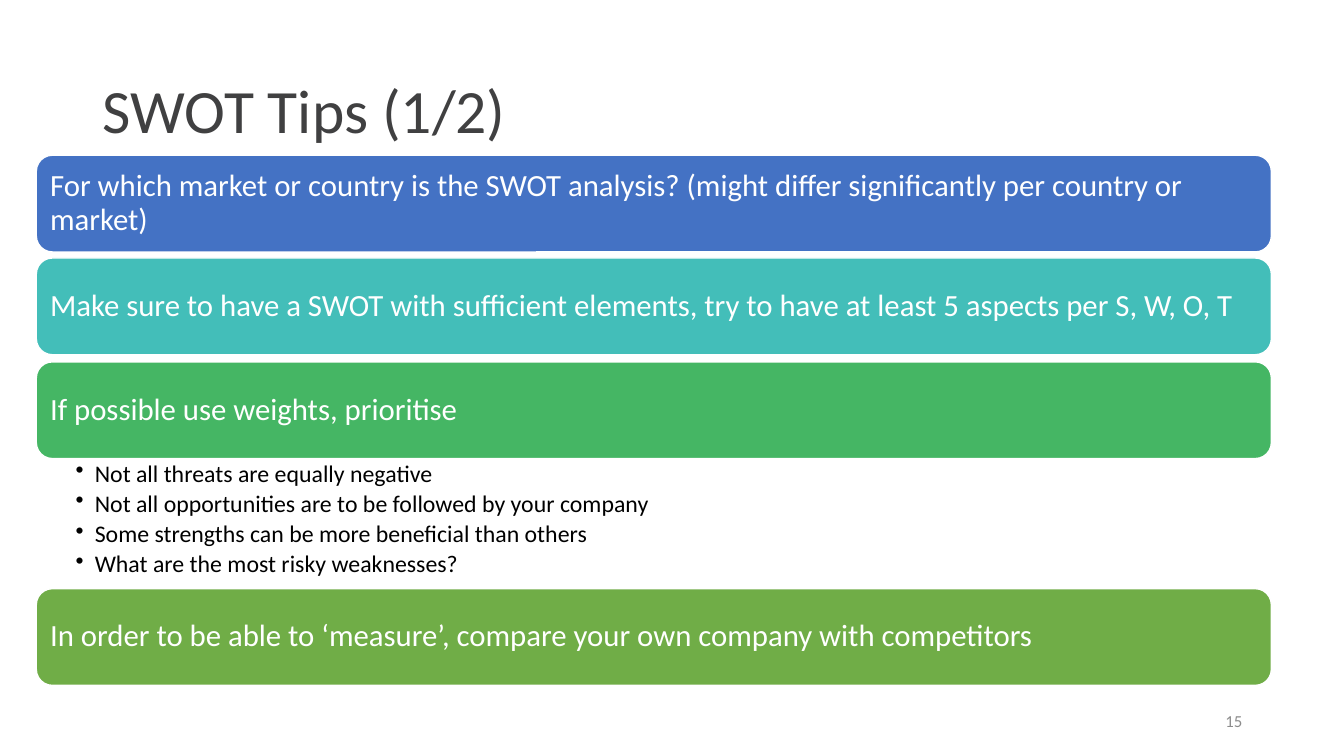
"""Build the SWOT tips slide: title, four coloured bars and a bullet list."""
from lxml import etree
from pptx import Presentation
from pptx.dml.color import RGBColor
from pptx.enum.shapes import MSO_SHAPE as SHAPE
from pptx.enum.text import MSO_ANCHOR as ANCHOR, PP_ALIGN as ALIGN
from pptx.oxml.ns import qn
from pptx.util import Inches, Pt

COLORS = {"title": "404041", "white": "FFFFFF", "black": "000000", "number": "8C8C8C",
          "blue": "4472C4", "teal": "43BEB9", "green": "45B664", "olive": "70AD47"}
LEFT, WIDTH, BAR_HEIGHT = 0.36, 12.25, 0.96

BARS = [
    (1.54, "blue", "For which market or country is the SWOT analysis? "
     "(might differ significantly per country or market)"),
    (2.56, "teal", "Make sure to have a SWOT with sufficient elements, "
     "try to have at least 5 aspects per S, W, O, T"),
    (3.59, "green", "If possible use weights, prioritise"),
    (5.84, "olive", "In order to be able to ‘measure’, "
     "compare your own company with competitors"),
]
BULLETS = [
    "Not all threats are equally negative",
    "Not all opportunities are to be followed by your company",
    "Some strengths can be more beneficial than others",
    "What are the most risky weaknesses?",
]


def set_frame(tf, anchor, left=0.1, top=0.05, right=0.1, bottom=0.05):
    frame = {"word_wrap": True, "vertical_anchor": anchor,
             "margin_left": Inches(left), "margin_top": Inches(top),
             "margin_right": Inches(right), "margin_bottom": Inches(bottom)}
    for name, value in frame.items():
        setattr(tf, name, value)


def write(p, text, size, color, align=ALIGN.LEFT, spacing=0.9, after=0):
    layout = {"alignment": align, "line_spacing": spacing, "space_after": Pt(after)}
    for name, value in layout.items():
        setattr(p, name, value)
    r = p.add_run()
    r.text = text
    for name, value in {"name": "Calibri", "size": Pt(size)}.items():
        setattr(r.font, name, value)
    r.font.color.rgb = RGBColor.from_string(COLORS[color])


prs = Presentation()
prs.slide_width, prs.slide_height = Inches(13.33), Inches(7.5)
s = prs.slides.add_slide(prs.slide_layouts[5])

title = s.shapes.title
title.left, title.top = Inches(0.92), Inches(0.4)
title.width, title.height = Inches(11.5), Inches(1.45)
set_frame(title.text_frame, ANCHOR.MIDDLE)
write(title.text_frame.paragraphs[0], "SWOT Tips (1/2)", 44, "title")

for top, color, text in BARS:
    sp = s.shapes.add_shape(SHAPE.ROUNDED_RECTANGLE, Inches(LEFT), Inches(top),
                            Inches(WIDTH), Inches(BAR_HEIGHT))
    sp.shadow.inherit = False
    sp.fill.solid()
    sp.fill.fore_color.rgb = RGBColor.from_string(COLORS[color])
    sp.line.color.rgb = RGBColor.from_string(COLORS["white"])
    sp.line.width = Pt(1)
    set_frame(sp.text_frame, ANCHOR.MIDDLE, 0.09, 0.09, 0.09, 0.09)
    write(sp.text_frame.paragraphs[0], text, 22, "white")

tips = s.shapes.add_textbox(Inches(LEFT), Inches(4.55), Inches(WIDTH), Inches(1.29))
tf = tips.text_frame
set_frame(tf, ANCHOR.TOP, 0.39, 0.03, 0.17, 0.03)
for i, text in enumerate(BULLETS):
    p = tf.add_paragraph() if i else tf.paragraphs[0]
    pPr = p._p.get_or_add_pPr()
    pPr.set("marL", str(Inches(0.19)))
    pPr.set("indent", str(-Inches(0.19)))
    etree.SubElement(pPr, qn("a:buChar")).set("char", "•")
    write(p, text, 17, "black", after=3.2)

number = s.shapes.add_textbox(Inches(9.42), Inches(6.95), Inches(3), Inches(0.4))
set_frame(number.text_frame, ANCHOR.MIDDLE)
write(number.text_frame.paragraphs[0], "15", 12, "number", ALIGN.RIGHT, 1.0)

prs.save("out.pptx")
